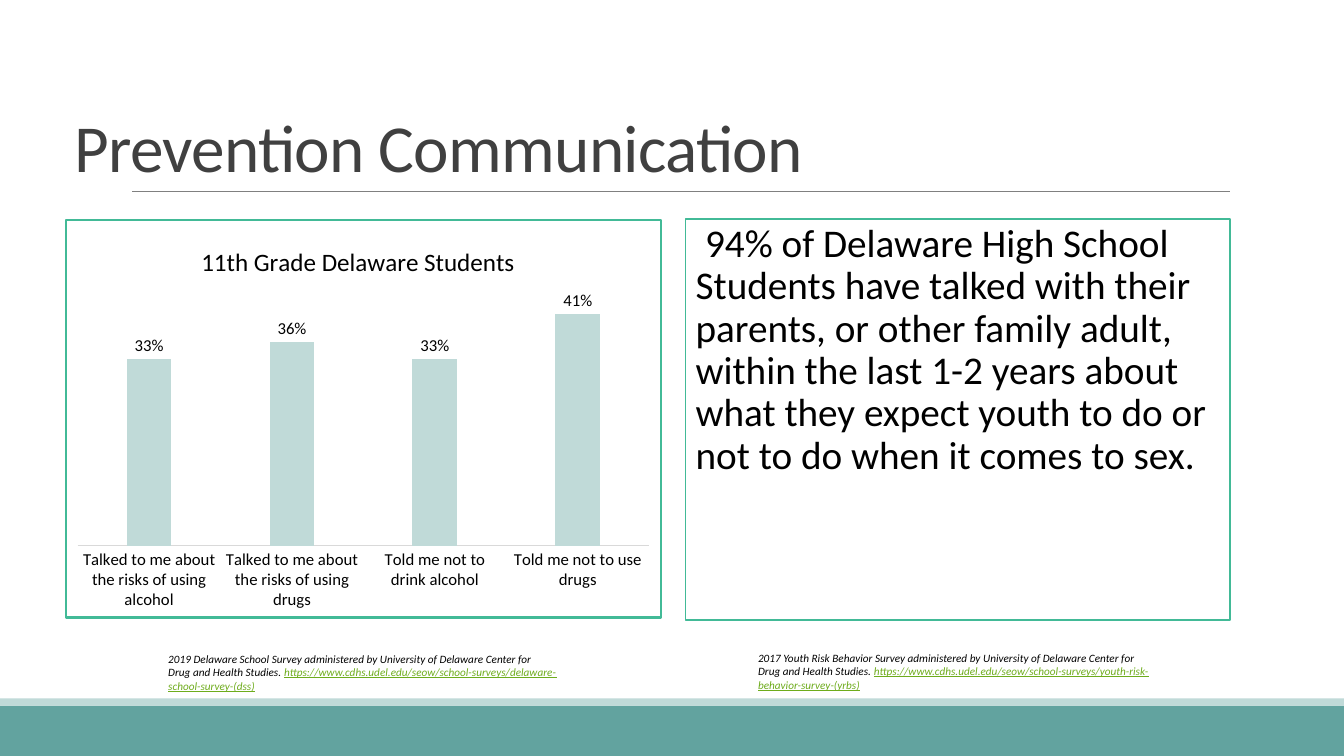
import pptx
import pptx.chart.data
import pptx.dml.color
import pptx.enum.chart
import pptx.enum.shapes
import pptx.enum.text
import pptx.oxml
import pptx.oxml.ns
import pptx.util
from pptx.util import Inches, Pt

FONT = "Calibri"
COLORS = {
    "teal": "62A39F", "pale": "C0DAD8", "rule": "808080", "title": "404040",
    "text": "000000", "link": "6EAC1C", "border": "42BA97", "white": "FFFFFF",
    "axis": "D9D9D9",
}
SURVEYS = "https://www.cdhs.udel.edu/seow/school-surveys/"
CREDIT = (" administered by University of Delaware Center for "
          "Drug and Health Studies. ")
STUDENT_ANSWERS = {
    "Talked to me about the risks of using alcohol": 0.33,
    "Talked to me about the risks of using drugs": 0.36,
    "Told me not to drink alcohol": 0.33,
    "Told me not to use drugs": 0.41,
}
FINDING = ("94% of Delaware High School Students have talked with their parents, "
           "or other family adult, within the last 1-2 years about what they "
           "expect youth to do or not to do when it comes to sex.")


def rgb(name):
    return pptx.dml.color.RGBColor.from_string(COLORS[name])


def parse_xml(markup):
    namespaces = pptx.oxml.ns.nsdecls("a", "c")
    return pptx.oxml.parse_xml(markup.replace("NS", namespaces, 1))


def style_font(font, size, color="text"):
    font.name = FONT
    font.size = Pt(size)
    font.color.rgb = rgb(color)


def add_run(paragraph, text, size, color="text"):
    run = paragraph.add_run()
    run.text = text
    style_font(run.font, size, color)
    return run


def add_rectangle(slide, box, fill, border=None, width=0):
    shape = slide.shapes.add_shape(
        pptx.enum.shapes.MSO_SHAPE.RECTANGLE, *map(Inches, box))
    shape.shadow.inherit = False
    shape.fill.solid()
    shape.fill.fore_color.rgb = rgb(fill)
    if border:
        shape.line.color.rgb = rgb(border)
        shape.line.width = Pt(width)
    else:
        shape.line.fill.background()
    return shape


def add_text_box(slide, box):
    shape = slide.shapes.add_textbox(*map(Inches, box))
    shape.text_frame.word_wrap = True
    return shape.text_frame


def add_footer_bands(slide, left, top, width, height):
    strip = 0.07
    add_rectangle(slide, (left, top + strip, width, height - strip), "teal")
    add_rectangle(slide, (left, top, width, strip), "pale")


def add_title(slide, left, top, width, height):
    """Title text resting on a thin rule that ends at the right edge."""
    bottom = Inches(top + height)
    rule = slide.shapes.add_connector(
        pptx.enum.shapes.MSO_CONNECTOR.STRAIGHT,
        Inches(left + 0.67), bottom, Inches(left + width), bottom)
    rule.line.color.rgb = rgb("rule")
    rule.line.width = Pt(0.5)
    rule._element.spPr.append(parse_xml("<a:effectLst NS/>"))
    frame = add_text_box(slide, (left, top, width, height))
    frame.vertical_anchor = pptx.enum.text.MSO_ANCHOR.BOTTOM
    paragraph = frame.paragraphs[0]
    paragraph.line_spacing = 0.85
    run = add_run(paragraph, "Prevention Communication", 48, "title")
    run.font._element.set("spc", "-50")


def add_citation(slide, box, survey, page):
    paragraph = add_text_box(slide, box).paragraphs[0]
    credit = add_run(paragraph, survey + CREDIT, 8)
    address = add_run(paragraph, SURVEYS + page, 8, "link")
    address.font.underline = True
    for run in (credit, address):
        run.font.italic = True


def manual_layout(x, y, width=None, height=None):
    """Chart layout in fractions of the chart area."""
    target = '<c:layoutTarget val="inner"/>' if width else ""
    size = (f'<c:w val="{width}"/><c:h val="{height}"/>') if width else ""
    return parse_xml(
        f'<c:layout NS><c:manualLayout>{target}<c:xMode val="edge"/>'
        f'<c:yMode val="edge"/><c:x val="{x}"/><c:y val="{y}"/>{size}'
        '</c:manualLayout></c:layout>')


def place(element, layout):
    for old in element.findall(pptx.oxml.ns.qn("c:layout")):
        element.remove(old)
    tx = element.find(pptx.oxml.ns.qn("c:tx"))
    if tx is None:
        element.insert(0, layout)
    else:
        tx.addnext(layout)


def add_student_chart(slide, box):
    data = pptx.chart.data.CategoryChartData(number_format="0%")
    data.categories = list(STUDENT_ANSWERS)
    data.add_series("Series 1", list(STUDENT_ANSWERS.values()))
    chart = slide.shapes.add_chart(
        pptx.enum.chart.XL_CHART_TYPE.COLUMN_CLUSTERED,
        *map(Inches, box), data).chart
    style_font(chart.font, 10)
    chart.has_legend = False

    chart.has_title = True
    title_run = add_run(chart.chart_title.text_frame.paragraphs[0],
                        "11th Grade Delaware Students", 18)
    title_run.font.bold = False
    chart.chart_title.include_in_layout = False
    place(chart.chart_title._element, manual_layout(0.22, 0.05))
    place(chart._chartSpace.chart.plotArea,
          manual_layout(0.02, 0.18, 0.96, 0.64))

    categories = chart.category_axis
    categories.major_tick_mark = pptx.enum.chart.XL_TICK_MARK.NONE
    style_font(categories.tick_labels.font, 12)
    categories.format.line.color.rgb = rgb("axis")
    categories.format.line.width = Pt(0.75)
    values = chart.value_axis
    values.minimum_scale = 0
    values.maximum_scale = 0.45
    values.has_major_gridlines = False
    values.visible = False

    plot = chart.plots[0]
    plot.vary_by_categories = False
    plot.gap_width = 219
    plot.overlap = -27
    bars = plot.series[0]
    bars.format.fill.solid()
    bars.format.fill.fore_color.rgb = rgb("pale")
    labels = bars.data_labels
    labels.show_value = True
    labels.number_format = "0%"
    labels.number_format_is_linked = False
    labels.position = pptx.enum.chart.XL_LABEL_POSITION.OUTSIDE_END
    style_font(labels.font, 12)

    chart._chartSpace.chart.addnext(parse_xml(
        f'<c:spPr NS><a:solidFill><a:srgbClr val="{COLORS["white"]}"/></a:solidFill>'
        f'<a:ln w="{Pt(1.75)}"><a:solidFill><a:srgbClr val="{COLORS["border"]}"/>'
        '</a:solidFill></a:ln></c:spPr>'))


def add_finding(slide, box):
    frame = add_rectangle(slide, box, "white", "border", 1.25).text_frame
    frame.word_wrap = True
    frame.vertical_anchor = pptx.enum.text.MSO_ANCHOR.TOP
    frame.margin_left = frame.margin_right = 0
    paragraph = frame.paragraphs[0]
    paragraph.alignment = pptx.enum.text.PP_ALIGN.LEFT
    paragraph.line_spacing = 0.9
    paragraph.space_before = Pt(12)
    paragraph.space_after = Pt(2)
    properties = paragraph._p.get_or_add_pPr()
    properties.set("marL", str(Inches(0.1)))
    properties.set("indent", str(Inches(-0.1)))
    properties.append(parse_xml(
        f'<a:buClr NS><a:srgbClr val="{COLORS["pale"]}"/></a:buClr>'))
    properties.append(parse_xml('<a:buChar NS char=" "/>'))
    add_run(paragraph, FINDING, 28)


def main():
    presentation = pptx.Presentation()
    presentation.slide_width = Inches(13.33)
    presentation.slide_height = Inches(7.5)
    slide = presentation.slides.add_slide(presentation.slide_layouts[6])
    add_footer_bands(slide, 0, 6.93, 13.33, 0.57)
    add_title(slide, 0.64, 0.31, 11.56, 1.59)
    add_citation(slide, (1.57, 6.42, 4.05, 0.37),
                 "2019 Delaware School Survey", "delaware-school-survey-(dss)")
    add_citation(slide, (7.42, 6.41, 4.16, 0.37),
                 "2017 Youth Risk Behavior Survey",
                 "youth-risk-behavior-survey-(yrbs)")
    add_student_chart(slide, (0.64, 2.17, 5.93, 3.97))
    add_finding(slide, (6.8, 2.17, 5.4, 3.98))
    presentation.save("out.pptx")


if __name__ == "__main__":
    main()
